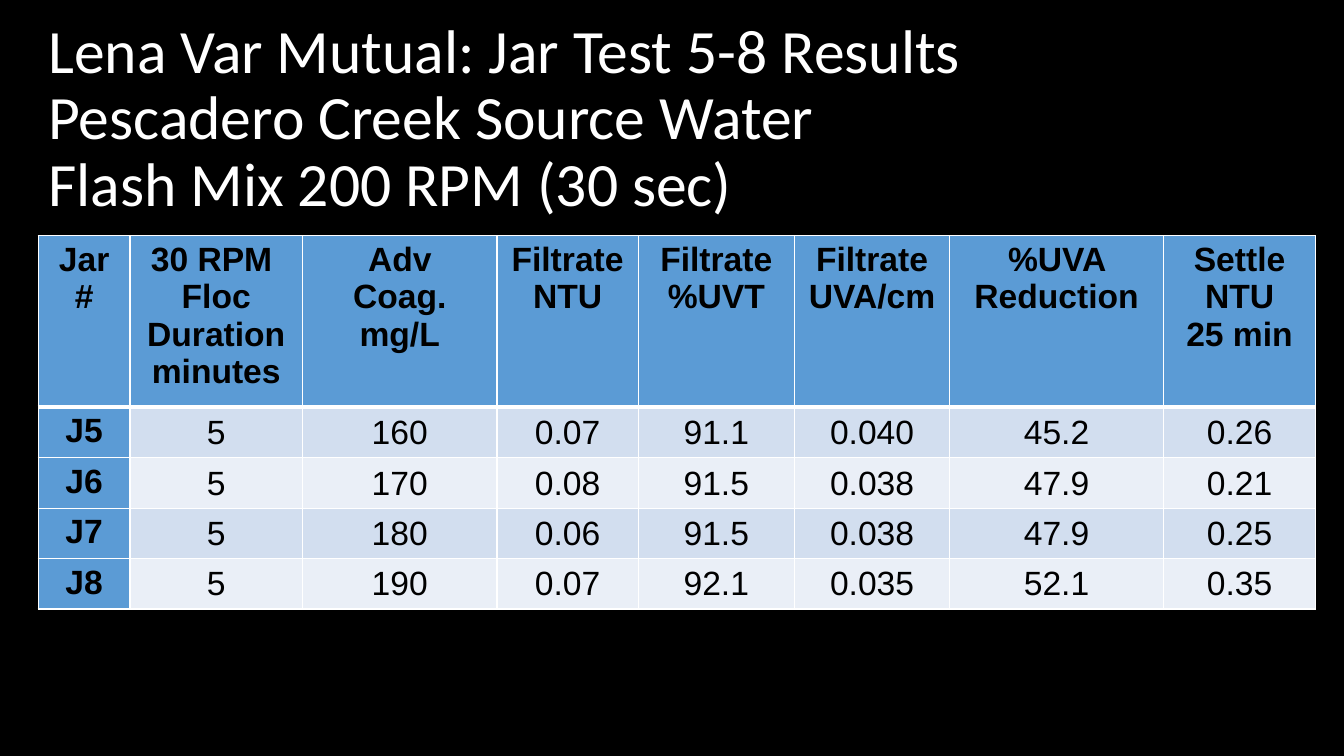
from dataclasses import dataclass

from lxml.etree import SubElement
from pptx import Presentation
from pptx.dml.color import RGBColor
from pptx.enum.text import MSO_ANCHOR, PP_ALIGN
from pptx.oxml.ns import qn
from pptx.util import Inches, Pt


@dataclass(frozen=True)
class Theme:
    background: str = "000000"
    title: str = "FFFFFF"
    text: str = "000000"
    border: str = "FFFFFF"
    heading: str = "5B9BD5"
    bands: tuple = ("D2DEEF", "EAEFF7")
    title_font: str = "Calibri"
    table_font: str = "Arial"
    title_size: int = 44
    table_size: int = 24
    thin: int = 1
    thick: int = 3


theme = Theme()


def style_font(paragraph, name, size, color, bold=False):
    font = paragraph.font
    font.name, font.size, font.bold = name, Pt(size), bold
    font.color.rgb = RGBColor.from_string(color)


def add_border(cell, side, points):
    """Draw one side of a cell; call before the cell gets its fill."""
    line = SubElement(cell._tc.get_or_add_tcPr(), qn(f"a:ln{side}"), w=str(Pt(points)))
    fill = SubElement(line, qn("a:solidFill"))
    SubElement(fill, qn("a:srgbClr"), val=theme.border)


presentation = Presentation()
presentation.slide_width, presentation.slide_height = Inches(13.33), Inches(7.5)
slide = presentation.slides.add_slide(presentation.slide_layouts[6])
slide.background.fill.solid()
slide.background.fill.fore_color.rgb = RGBColor.from_string(theme.background)

left_margin = Inches(0.38)

# Title
title = slide.shapes.add_textbox(left_margin, Inches(0.12), Inches(12.04), Inches(2.14))
title_frame = title.text_frame
title_frame.word_wrap = True
title_frame.vertical_anchor = MSO_ANCHOR.MIDDLE
title_paragraph = title_frame.paragraphs[0]
title_paragraph.text = (
    "Lena Var Mutual: Jar Test 5-8 Results\n"
    "Pescadero Creek Source Water\n"
    "Flash Mix 200 RPM (30 sec)"
)
title_paragraph.line_spacing = 0.9
style_font(title_paragraph, theme.title_font, theme.title_size, theme.title)

# Jar test results
rows = [
    ["Jar\n#", "30 RPM \nFloc\nDuration\nminutes", "Adv\nCoag.\nmg/L", "Filtrate\nNTU",
     "Filtrate\n%UVT", "Filtrate\nUVA/cm", "%UVA Reduction", "Settle\nNTU\n25 min"],
    ["J5", "5", "160", "0.07", "91.1", "0.040", "45.2", "0.26"],
    ["J6", "5", "170", "0.08", "91.5", "0.038", "47.9", "0.21"],
    ["J7", "5", "180", "0.06", "91.5", "0.038", "47.9", "0.25"],
    ["J8", "5", "190", "0.07", "92.1", "0.035", "52.1", "0.35"],
]
column_widths = [0.91, 1.71, 1.93, 1.4, 1.55, 1.54, 2.12, 1.51]
row_heights = [1.04] + [0.44] * (len(rows) - 1)

table = slide.shapes.add_table(
    len(rows), len(column_widths), left_margin, Inches(2.34),
    Inches(sum(column_widths)), Inches(sum(row_heights)),
).table
table.first_col = True
for column, width in zip(table.columns, column_widths):
    column.width = Inches(width)
for row, height in zip(table.rows, row_heights):
    row.height = Inches(height)

for row_index, row in enumerate(rows):
    for column_index, text in enumerate(row):
        cell = table.cell(row_index, column_index)
        is_heading = row_index == 0 or column_index == 0
        for side in "LRTB":
            under_header = (row_index, side) in ((0, "B"), (1, "T"))
            add_border(cell, side, theme.thick if under_header else theme.thin)

        color = theme.heading if is_heading else theme.bands[(row_index - 1) % 2]
        cell.fill.solid()
        cell.fill.fore_color.rgb = RGBColor.from_string(color)
        if not is_heading:
            cell.vertical_anchor = MSO_ANCHOR.MIDDLE
            cell.margin_left = cell.margin_right = cell.margin_top = Inches(0.01)
            cell.margin_bottom = 0

        cell.text_frame.text = text
        for paragraph in cell.text_frame.paragraphs:
            paragraph.alignment = PP_ALIGN.CENTER
            style_font(paragraph, theme.table_font, theme.table_size, theme.text, is_heading)

presentation.save("out.pptx")
